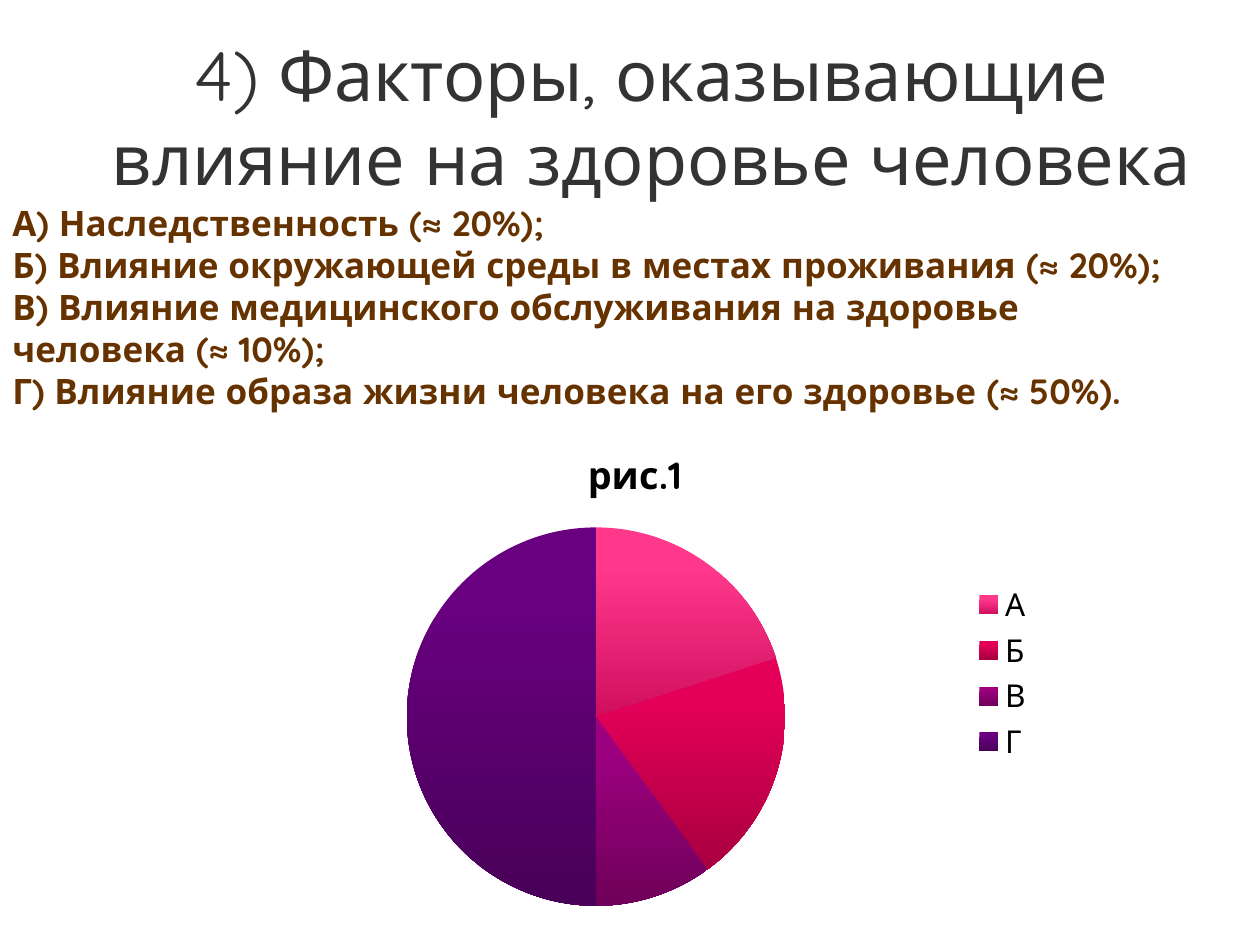
from dataclasses import dataclass

from pptx import Presentation
from pptx.chart.data import CategoryChartData
from pptx.dml.color import RGBColor
from pptx.enum.chart import XL_CHART_TYPE, XL_LEGEND_POSITION
from pptx.enum.text import MSO_ANCHOR, PP_ALIGN
from pptx.util import Inches, Pt


@dataclass(frozen=True)
class Theme:
    font: str = "Quicksand"
    title_color: str = "333333"
    list_color: str = "663300"
    chart_color: str = "000000"
    title_size: float = 40
    list_size: float = 20
    chart_title_size: float = 21.6
    legend_size: float = 18
    # Top and bottom colour of each slice
    slices: tuple = (("FF388C", "D0105F"), ("E40059", "A8003F"),
                     ("9C007F", "6E0059"), ("68007F", "480058"))


THEME = Theme()
WIDTH, HEIGHT = Inches(10), Inches(7.5)

TITLE = "4) Факторы, оказывающие влияние на здоровье человека"
FACTORS = (
    "А) Наследственность (≈ 20%);",
    "Б) Влияние окружающей среды в местах проживания (≈ 20%);",
    "В) Влияние медицинского обслуживания на здоровье человека (≈ 10%);",
    "Г) Влияние образа жизни человека на его здоровье (≈ 50%).",
)
CHART_TITLE = "рис.1"
SHARES = {"А": 20, "Б": 20, "В": 10, "Г": 50}


def area(left, top, width, height):
    """Turn shares of the slide into a box."""
    return (round(left * WIDTH), round(top * HEIGHT),
            round(width * WIDTH), round(height * HEIGHT))


def style_font(font, size, color, bold=False):
    font.name = THEME.font
    font.size = Pt(size)
    font.bold = bold
    font.color.rgb = RGBColor.from_string(color)


def add_text(page, box, lines, size, color, bold=False,
             align=PP_ALIGN.LEFT, anchor=MSO_ANCHOR.TOP):
    frame = page.shapes.add_textbox(*box).text_frame
    frame.word_wrap = True
    frame.vertical_anchor = anchor
    frame.text = "\n".join(lines)
    for para in frame.paragraphs:
        para.alignment = align
        style_font(para.font, size, color, bold)


def add_title(page, box):
    add_text(page, box, [TITLE], THEME.title_size, THEME.title_color,
             align=PP_ALIGN.CENTER, anchor=MSO_ANCHOR.MIDDLE)


def add_factors(page, box):
    add_text(page, box, FACTORS, THEME.list_size, THEME.list_color, bold=True)


def add_shares_pie(page, box):
    data = CategoryChartData()
    data.categories = list(SHARES)
    data.add_series(CHART_TITLE, list(SHARES.values()))
    chart = page.shapes.add_chart(XL_CHART_TYPE.PIE, *box, data).chart
    style_font(chart.font, THEME.legend_size, THEME.chart_color)

    # Chart title and legend
    chart.has_title = True
    title = chart.chart_title
    title.include_in_layout = False
    title.text_frame.text = CHART_TITLE
    style_font(title.text_frame.paragraphs[0].font,
               THEME.chart_title_size, THEME.chart_color, bold=True)
    chart.has_legend = True
    chart.legend.position = XL_LEGEND_POSITION.RIGHT
    chart.legend.include_in_layout = False

    # Slices shaded from top to bottom
    plot = chart.plots[0]
    plot.vary_by_categories = True
    for index, colors in enumerate(THEME.slices):
        fill = plot.series[0].points[index].format.fill
        fill.gradient()
        fill.gradient_angle = 270
        for stop, color, position in zip(fill.gradient_stops, colors, (0.2, 1)):
            stop.color.rgb = RGBColor.from_string(color)
            stop.position = position


def main():
    deck = Presentation()
    deck.slide_width, deck.slide_height = WIDTH, HEIGHT
    page = deck.slides.add_slide(deck.slide_layouts[6])
    add_title(page, area(0.067, 0.039, 0.9, 0.167))
    add_factors(page, area(0, 0.207, 0.957, 0.237))
    add_shares_pie(page, area(0.177, 0.448, 0.654, 0.529))
    deck.save("out.pptx")


if __name__ == "__main__":
    main()
